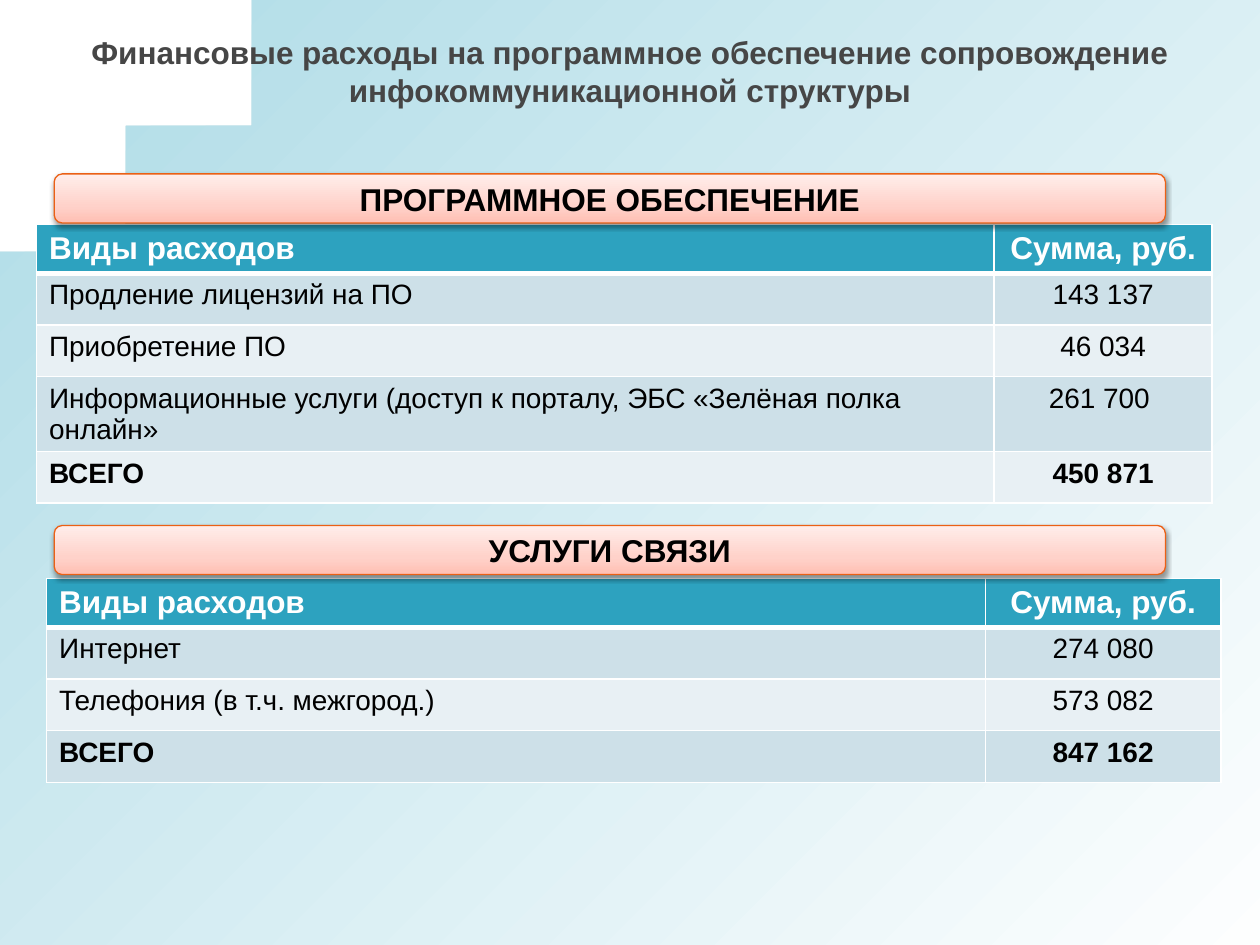
from lxml import etree
from pptx import Presentation
from pptx import util as u
from pptx.dml.color import RGBColor
from pptx.enum import shapes, text
from pptx.oxml.ns import qn

TITLE = "Финансовые расходы на программное обеспечение сопровождение инфокоммуникационной структуры"
HEADER = ("Виды расходов", "Сумма, руб.")
SECTIONS = [
    dict(name="ПРОГРАММНОЕ ОБЕСПЕЧЕНИЕ", banner_top=1.38, left=0.29, top=1.78, cols=(7.6, 1.73),
         rows=[("Продление лицензий на ПО", "143 137"),
               ("Приобретение ПО", "46 034"),
               ("Информационные услуги (доступ к порталу, ЭБС «Зелёная полка онлайн»", "261 700 "),
               ("ВСЕГО", "450 871")]),
    dict(name="УСЛУГИ СВЯЗИ", banner_top=4.17, left=0.37, top=4.59, cols=(7.45, 1.87),
         rows=[("Интернет", "274 080"),
               ("Телефония (в т.ч. межгород.)", "573 082"),
               ("ВСЕГО", "847 162")]),
]
WIDTH, HEIGHT = 10, 7.5
HEADER_HEIGHT, ROW_HEIGHT = 0.39, 0.41
CURVES = [((2.58, 0), (1.9, 0.16), (1.16, 0.83), (0.98, 1.07)),
          ((0.98, 1.07), (0.8, 1.32), (0.16, 1.94), (0, 3.01))]
FONT = "Arial"
WHITE, BLACK = RGBColor(255, 255, 255), RGBColor(0, 0, 0)
GRAY, TEAL = RGBColor(0x46, 0x46, 0x46), RGBColor(0x2D, 0xA2, 0xBF)
PALE_TEAL, ORANGE = RGBColor(0xAD, 0xDB, 0xE6), RGBColor(0xEB, 0x60, 0x15)
BANDS = RGBColor(0xCD, 0xE0, 0xE8), RGBColor(0xE8, 0xF0, 0xF4)
PINKS = [(0, RGBColor(0xFF, 0xBF, 0xB3)), (35, RGBColor(0xFF, 0xD2, 0xCA)),
         (100, RGBColor(0xFF, 0xEE, 0xEB))]


def add(parent, tag, **attrs):
    return etree.SubElement(parent, qn(tag), {k: str(v) for k, v in attrs.items()})


def set_text(tf, words, size, color, bold=True, align=text.PP_ALIGN.CENTER):
    tf.word_wrap = True
    p = tf.paragraphs[0]
    p.text, p.alignment = words, align
    p.font.name, p.font.size, p.font.bold = FONT, u.Pt(size), bold
    p.font.color.rgb = color


def set_gradient(sp, stops, angle):
    sp.fill.gradient()
    sp.fill.gradient_angle = angle
    stop_list = sp._element.spPr.find(".//" + qn("a:gsLst"))
    for stop in list(stop_list):
        stop_list.remove(stop)
    for position, color in stops:
        add(add(stop_list, "a:gs", pos=position * 1000), "a:srgbClr", val=color)


def add_backdrop(s):
    points = []
    for a, b, c, d in CURVES:
        for t in (i / 24 for i in range(1, 25)):
            weights = (1 - t) ** 3, 3 * t * (1 - t) ** 2, 3 * t * t * (1 - t), t ** 3
            points.append([sum(w * q[k] for w, q in zip(weights, (a, b, c, d))) for k in (0, 1)])
    fb = s.shapes.build_freeform(*CURVES[0][0], scale=u.Inches(1))
    fb.add_line_segments(points + [(0, HEIGHT), (WIDTH, HEIGHT), (WIDTH, 0)], close=True)
    sp = fb.convert_to_shape()
    sp.shadow.inherit = False
    sp.line.fill.background()
    set_gradient(sp, [(0, PALE_TEAL), (100, WHITE)], 315)
    s.shapes._spTree.insert(2, sp._element)


def add_banner(s, name, top):
    sp = s.shapes.add_shape(shapes.MSO_SHAPE.ROUNDED_RECTANGLE,
                            *map(u.Inches, (0.43, top, 8.82, 0.39)))
    set_gradient(sp, PINKS, 90)
    sp.line.color.rgb, sp.line.width = ORANGE, u.Pt(0.75)
    sp.shadow.inherit = False
    shadow = add(sp._element.spPr.find(qn("a:effectLst")), "a:outerShdw", blurRad=u.Pt(3.1),
                 dist=u.Pt(1.6), dir=5400000, rotWithShape=0)
    add(add(shadow, "a:srgbClr", val=BLACK), "a:alpha", val=38000)
    sp.text_frame.vertical_anchor = text.MSO_ANCHOR.MIDDLE
    set_text(sp.text_frame, name, 18, BLACK)


def set_borders(cell, bottom, top):
    props = cell._tc.get_or_add_tcPr()
    for i, (side, width) in enumerate((("L", 1), ("R", 1), ("T", top), ("B", bottom))):
        line = etree.Element(qn("a:ln" + side), w=str(u.Pt(width)))
        add(add(line, "a:solidFill"), "a:srgbClr", val=WHITE)
        props.insert(i, line)


def add_costs(s, left, top, cols, rows):
    heights = [HEADER_HEIGHT] + [ROW_HEIGHT] * len(rows)
    table = s.shapes.add_table(len(heights), len(cols), *map(
        u.Inches, (left, top, sum(cols), sum(heights)))).table
    for column, width in zip(table.columns, cols):
        column.width = u.Inches(width)
    for r, values in enumerate([HEADER] + rows):
        table.rows[r].height = u.Inches(heights[r])
        for c, words in enumerate(values):
            cell = table.cell(r, c)
            cell.fill.solid()
            cell.fill.fore_color.rgb = BANDS[(r - 1) % 2] if r else TEAL
            set_borders(cell, bottom=1 if r else 3, top=3 if r == 1 else 1)
            set_text(cell.text_frame, words, 16 if r else 18, BLACK if r else WHITE,
                     r in (0, len(rows)), text.PP_ALIGN.CENTER if c else text.PP_ALIGN.LEFT)


def main():
    """Build the slide of software and telecom costs."""
    prs = Presentation()
    prs.slide_width, prs.slide_height = u.Inches(WIDTH), u.Inches(HEIGHT)
    s = prs.slides.add_slide(prs.slide_layouts[5])
    add_backdrop(s)
    title = s.shapes.title
    title.left, title.top, title.width, title.height = map(u.Inches, (0.5, 0.25, 9, 0.62))
    title.text_frame.auto_size = text.MSO_AUTO_SIZE.NONE
    title.text_frame.vertical_anchor = text.MSO_ANCHOR.MIDDLE
    set_text(title.text_frame, TITLE, 18, GRAY)
    for part in SECTIONS:
        add_costs(s, part["left"], part["top"], part["cols"], part["rows"])
        add_banner(s, part["name"], part["banner_top"])
    prs.save("out.pptx")


if __name__ == "__main__":
    main()
